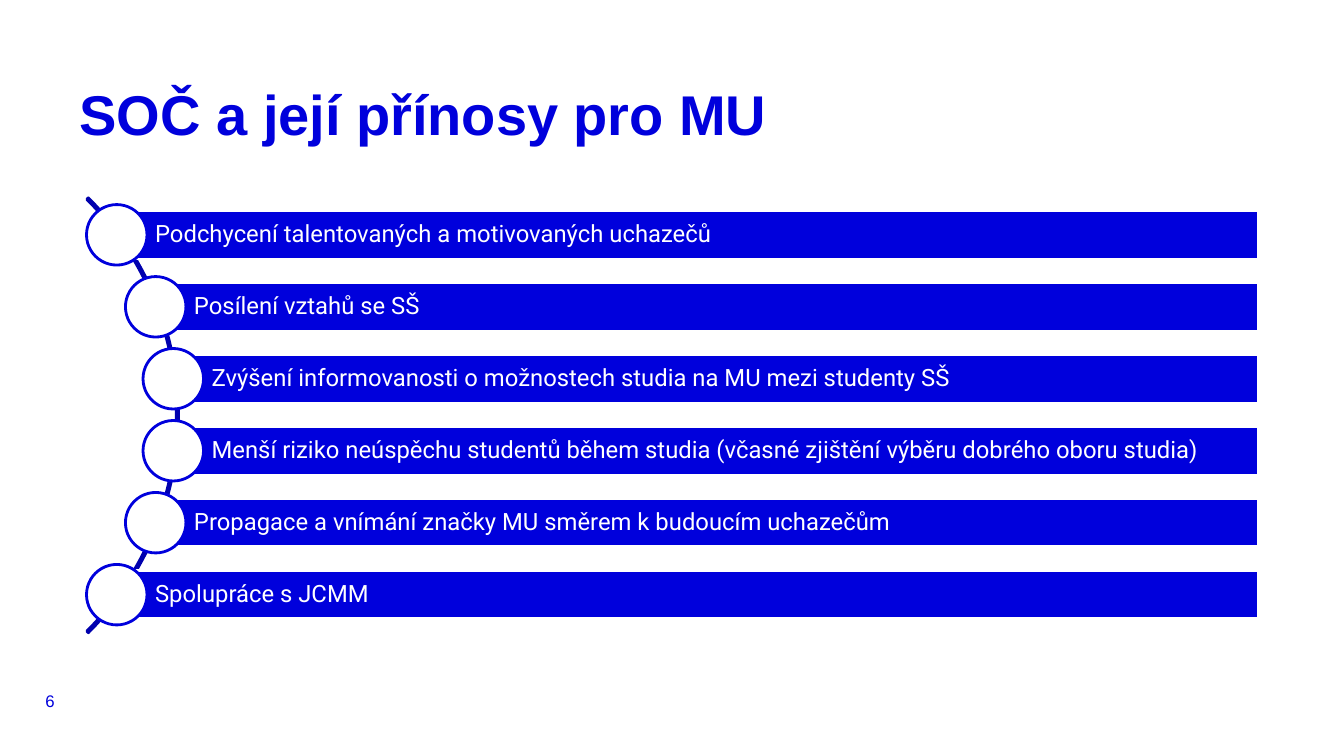
from math import sqrt

from pptx import Presentation
from pptx.dml.color import RGBColor
from pptx.enum import shapes, text
from pptx.util import Emu, Pt

TITLE = "SOČ a její přínosy pro MU"
PAGE_NUMBER = "6"
BENEFITS = [
    "Podchycení talentovaných a motivovaných uchazečů",
    "Posílení vztahů se SŠ",
    "Zvýšení informovanosti o možnostech studia na MU mezi studenty SŠ",
    "Menší riziko neúspěchu studentů během studia (včasné zjištění výběru dobrého oboru studia)",
    "Propagace a vnímání značky MU směrem k budoucím uchazečům",
    "Spolupráce s JCMM",
]

BLUE = RGBColor(0x00, 0x00, 0xDC)
DARK_BLUE = RGBColor(0x00, 0x00, 0xAE)
WHITE = RGBColor(0xFF, 0xFF, 0xFF)

PX = 9144  # EMU, 100 px to the inch
SLIDE_SIZE = (1333, 750)
TITLE_BOX = (79, 79, 1176, 49)
NUMBER_BOX = (45, 681, 28, 28)
ARC_BOX = (-433, 107, 610, 610)
ARC_ADJUSTMENTS = (189, 27, 0.0035)
ORBIT_X, ORBIT_RADIUS = -129, 303
FIRST_Y, LAST_Y = 233, 590
BAR_RIGHT, BAR_HEIGHT = 1248, 48
CIRCLE = 60


def emu(lengths):
    return [Emu(round(length * PX)) for length in lengths]


def add_outlined(slide, preset, box, line, fill=None):
    shape = slide.shapes.add_shape(preset, *emu(box))
    shape.shadow.inherit = False
    if fill is None:
        shape.fill.background()
    else:
        shape.fill.solid()
        shape.fill.fore_color.rgb = fill
    shape.line.color.rgb = line
    shape.line.width = Pt(2)
    return shape


def write(shape, words, color, margins, anchor, **font):
    frame = shape.text_frame
    sides = ("margin_left", "margin_top", "margin_right", "margin_bottom")
    layout = dict(zip(sides, emu(margins)), word_wrap=True, vertical_anchor=anchor)
    for name, value in layout.items():
        setattr(frame, name, value)
    paragraph = frame.paragraphs[0]
    paragraph.alignment = text.PP_ALIGN.LEFT
    run = paragraph.add_run()
    run.text = words
    for name, value in font.items():
        setattr(run.font, name, value)
    run.font.color.rgb = color
    return paragraph


def add_benefit(slide, words, center_x, center_y):
    bar_box = (center_x, center_y - BAR_HEIGHT / 2, BAR_RIGHT - center_x, BAR_HEIGHT)
    bar = add_outlined(slide, shapes.MSO_SHAPE.RECTANGLE, bar_box, WHITE, BLUE)
    benefit = write(bar, words, WHITE, (38, 5, 5, 5), text.MSO_ANCHOR.MIDDLE,
                    name="Roboto", size=Pt(17))
    benefit.line_spacing = 0.9
    circle_box = (center_x - CIRCLE / 2, center_y - CIRCLE / 2, CIRCLE, CIRCLE)
    add_outlined(slide, shapes.MSO_SHAPE.OVAL, circle_box, BLUE, WHITE)


def main():
    deck = Presentation()
    deck.slide_width, deck.slide_height = emu(SLIDE_SIZE)
    slide = deck.slides.add_slide(deck.slide_layouts[6])

    page_number = slide.shapes.add_textbox(*emu(NUMBER_BOX))
    write(page_number, PAGE_NUMBER, BLUE, (0, 0, 0, 0), text.MSO_ANCHOR.MIDDLE,
          name="Arial", size=Pt(12))
    title = slide.shapes.add_textbox(*emu(TITLE_BOX))
    write(title, TITLE, BLUE, (0, 0, 0, 0), text.MSO_ANCHOR.TOP,
          name="Arial", size=Pt(40), bold=True)

    arc = add_outlined(slide, shapes.MSO_SHAPE.BLOCK_ARC, ARC_BOX, DARK_BLUE)
    for index, value in enumerate(ARC_ADJUSTMENTS):
        arc.adjustments[index] = value

    # The circles sit on the arc at equal vertical steps.
    step = (LAST_Y - FIRST_Y) / (len(BENEFITS) - 1)
    middle_y = (FIRST_Y + LAST_Y) / 2
    for row, words in enumerate(BENEFITS):
        center_y = FIRST_Y + row * step
        center_x = ORBIT_X + sqrt(ORBIT_RADIUS**2 - (center_y - middle_y) ** 2)
        add_benefit(slide, words, center_x, center_y)

    deck.save("out.pptx")


if __name__ == "__main__":
    main()
